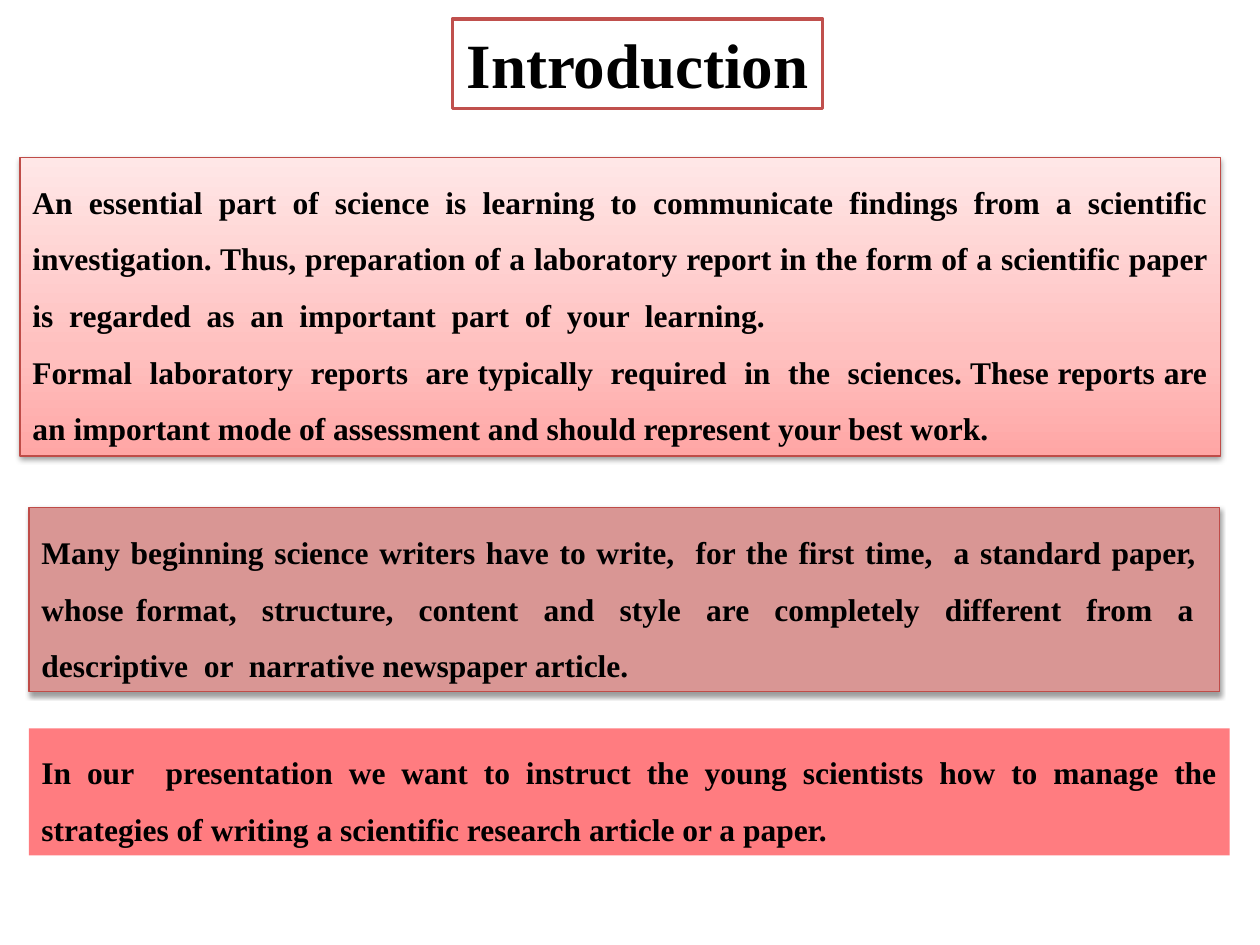
import copy
from dataclasses import dataclass

import lxml.etree
import pptx
import pptx.dml.color
import pptx.enum.shapes
import pptx.enum.text
import pptx.oxml.ns
import pptx.util
from pptx.util import Inches

ALIGN = pptx.enum.text.PP_ALIGN


@dataclass(frozen=True)
class Theme:
    """Colours, font and type sizes of the slide."""
    font: str = "Times New Roman"
    title_size: int = 36
    body_size: int = 18
    text: str = "000000"
    title_fill: str = "FFFFFF"
    title_line: str = "C0504D"
    panel_line: str = "BF4C48"
    gradient: tuple = ((0, "FFA6A5"), (0.35, "FFC0BF"), (1, "FFE7E7"))
    rose: str = "D99694"
    coral: str = "FF7C80"


THEME = Theme()

FINDINGS = (
    "An  essential  part  of  science  is  learning  to  communicate  findings  from  a  scientific "
    "investigation. Thus, preparation of a laboratory report in the form of a scientific paper "
    "is  regarded  as  an  important  part  of  your  learning. ",
    "Formal  laboratory  reports  are typically  required  in  the  sciences. These reports are "
    "an important mode of assessment and should represent your best work.",
)
BEGINNERS = (
    "Many beginning science writers have to write,  for the first time,  a standard paper,  "
    "whose format,  structure,  content  and  style  are  completely  different  from  a  "
    "descriptive  or  narrative newspaper article.  ",
)
PURPOSE = (
    "In our  presentation we want to instruct the young scientists how to manage the "
    "strategies of writing a scientific research article or a paper.",
)


def rgb(value):
    """Return the colour for a hex string."""
    return pptx.dml.color.RGBColor.from_string(value)


def fill_gradient(shape, stops):
    """Fill the shape from bottom to top with three colour stops."""
    shape.fill.gradient()
    shape.fill.gradient_angle = 90
    stop_list = shape._element.spPr.find(".//" + pptx.oxml.ns.qn("a:gsLst"))
    stop_list.append(copy.deepcopy(stop_list[-1]))
    for stop, (position, color) in zip(shape.fill.gradient_stops, stops):
        stop.position = position
        stop.color.rgb = rgb(color)


def add_shadow(shape):
    """Give the shape a soft shadow below it."""
    qn = pptx.oxml.ns.qn
    effects = shape._element.spPr.find(qn("a:effectLst"))
    shadow = lxml.etree.SubElement(
        effects, qn("a:outerShdw"), blurRad=str(pptx.util.Pt(3.1)),
        dist=str(pptx.util.Pt(1.6)), dir="5400000", rotWithShape="0")
    color = lxml.etree.SubElement(shadow, qn("a:srgbClr"), val="000000")
    lxml.etree.SubElement(color, qn("a:alpha"), val="38000")


def add_box(slide, left, top, width, height, fill, line=None, line_width=0.75, shadow=False):
    """Add a rectangle with a plain or gradient fill."""
    shape = slide.shapes.add_shape(
        pptx.enum.shapes.MSO_SHAPE.RECTANGLE,
        Inches(left), Inches(top), Inches(width), Inches(height))
    shape.shadow.inherit = False
    if isinstance(fill, str):
        shape.fill.solid()
        shape.fill.fore_color.rgb = rgb(fill)
    else:
        fill_gradient(shape, fill)
    if line:
        shape.line.color.rgb = rgb(line)
        shape.line.width = pptx.util.Pt(line_width)
    else:
        shape.line.fill.background()
    if shadow:
        add_shadow(shape)
    return shape


def write_text(shape, paragraphs, size=THEME.body_size, align=ALIGN.JUSTIFY, spacing=1.5, wrap=True):
    """Write bold paragraphs into the shape."""
    frame = shape.text_frame
    frame.word_wrap = wrap
    frame.auto_size = pptx.enum.text.MSO_AUTO_SIZE.SHAPE_TO_FIT_TEXT
    frame.vertical_anchor = pptx.enum.text.MSO_ANCHOR.TOP
    frame.text = "\n".join(paragraphs)
    for paragraph in frame.paragraphs:
        paragraph.alignment = align
        paragraph.line_spacing = spacing
        font = paragraph.runs[0].font
        font.name = THEME.font
        font.size = pptx.util.Pt(size)
        font.bold = True
        font.color.rgb = rgb(THEME.text)


def main():
    """Build and save the introduction slide."""
    presentation = pptx.Presentation()
    presentation.slide_width = Inches(10)
    presentation.slide_height = Inches(7.5)
    slide = presentation.slides.add_slide(presentation.slide_layouts[6])

    findings = add_box(slide, 0.16, 1.25, 9.53, 2.37, THEME.gradient, THEME.panel_line, shadow=True)
    write_text(findings, FINDINGS)
    beginners = add_box(slide, 0.23, 4.03, 9.45, 1.46, THEME.rose, THEME.panel_line, shadow=True)
    write_text(beginners, BEGINNERS)
    title = add_box(slide, 3.59, 0.15, 2.94, 0.71, THEME.title_fill, THEME.title_line, line_width=2)
    write_text(title, ["Introduction"], size=THEME.title_size, align=ALIGN.CENTER, spacing=1.0, wrap=False)
    purpose = add_box(slide, 0.23, 5.78, 9.53, 1.01, THEME.coral)
    write_text(purpose, PURPOSE)

    presentation.save("out.pptx")


if __name__ == "__main__":
    main()
